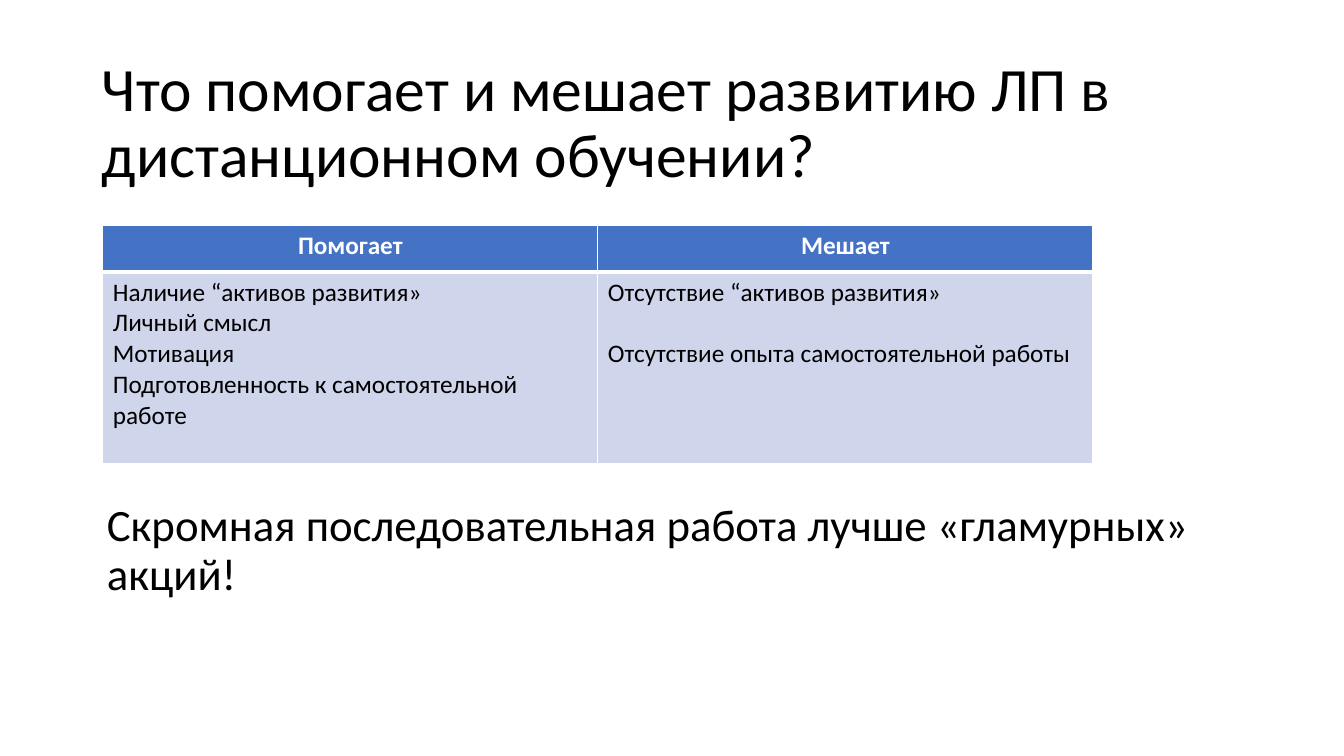
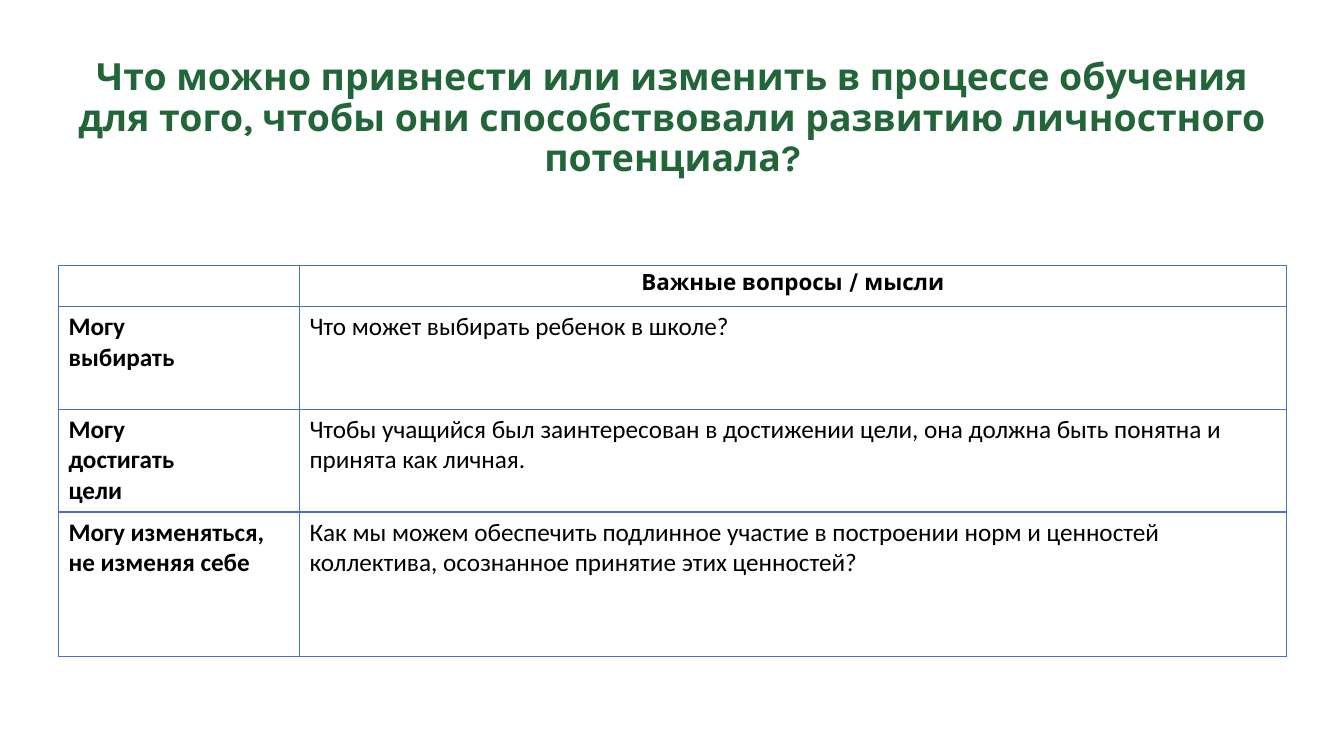
from dataclasses import dataclass
from typing import Optional

import pptx
import pptx.dml.color
import pptx.enum.text
import pptx.oxml
import pptx.oxml.ns
import pptx.util
from pptx.util import Inches

BLACK, WHITE = "000000", "FFFFFF"
BLUE, PALE_BLUE, GREEN = "4472C4", "CFD5EA", "216539"
TITLE_AND_BODY, TITLE_ONLY = 1, 5
ALIGN = pptx.enum.text.PP_ALIGN
ANCHOR = pptx.enum.text.MSO_ANCHOR
AUTO_SIZE = pptx.enum.text.MSO_AUTO_SIZE


@dataclass(frozen=True)
class TextStyle:
    size: float
    color: str = BLACK
    font: str = "Calibri"
    bold: bool = False
    align: ALIGN = ALIGN.LEFT


@dataclass(frozen=True)
class Box:
    left: float
    top: float
    width: float
    height: float


@dataclass(frozen=True)
class Borders:
    """Line colour and the widths in points of the four sides of a cell."""
    color: str
    left: float = 1
    right: float = 1
    top: float = 1
    bottom: float = 1


@dataclass(frozen=True)
class Cell:
    text: str
    style: TextStyle
    borders: Borders
    fill: Optional[str] = None


CELL_TEXT = TextStyle(18)
CELL_BOLD = TextStyle(18, bold=True)


def rgb(color: str) -> pptx.dml.color.RGBColor:
    return pptx.dml.color.RGBColor.from_string(color)


def write(tf, text: str, style: TextStyle) -> None:
    tf.text = text
    for p in tf.paragraphs:
        p.alignment = style.align
        for r in p.runs:
            r.font.name = style.font
            r.font.size = pptx.util.Pt(style.size)
            r.font.bold = style.bold
            r.font.color.rgb = rgb(style.color)


def fill_placeholder(sp, box: Box, text: str, style: TextStyle,
                     anchor: ANCHOR = ANCHOR.TOP, fitted: bool = False) -> None:
    """Move and format a placeholder; a fitted one has no insets and grows."""
    sp.left, sp.top = Inches(box.left), Inches(box.top)
    sp.width, sp.height = Inches(box.width), Inches(box.height)
    tf = sp.text_frame
    tf.word_wrap = True
    tf.vertical_anchor = anchor
    tf.auto_size = AUTO_SIZE.SHAPE_TO_FIT_TEXT if fitted else AUTO_SIZE.NONE
    tf.margin_left = tf.margin_right = Inches(0 if fitted else 0.1)
    tf.margin_top = tf.margin_bottom = Inches(0 if fitted else 0.05)
    write(tf, text, style)
    for p in tf.paragraphs:
        p.line_spacing = 0.9
        p.space_before = pptx.util.Pt(0)


def remove_bullets(tf) -> None:
    for p in tf.paragraphs:
        pPr = p._p.get_or_add_pPr()
        pPr.set("marL", "0")
        pPr.set("indent", "0")
        pptx.oxml.ns.qn("a:buNone")
        pPr.append(pptx.oxml.parse_xml(
            f'<a:buNone {pptx.oxml.ns.nsdecls("a")}/>'))


def draw_borders(cell, borders: Borders) -> None:
    tcPr = cell._tc.get_or_add_tcPr()
    sides = (("lnL", borders.left), ("lnR", borders.right),
             ("lnT", borders.top), ("lnB", borders.bottom))
    for i, (tag, width) in enumerate(sides):
        tcPr.insert(i, pptx.oxml.parse_xml(
            f'<a:{tag} {pptx.oxml.ns.nsdecls("a")} w="{pptx.util.Pt(width)}">'
            f'<a:solidFill><a:srgbClr val="{borders.color}"/></a:solidFill>'
            f'</a:{tag}>'))


def add_table(slide, left: float, top: float, widths: list[float],
              heights: list[float], rows: list[list[Cell]]):
    table = slide.shapes.add_table(
        len(heights), len(widths), Inches(left), Inches(top),
        Inches(sum(widths)), Inches(sum(heights))).table
    table.first_row = table.horz_banding = False
    for column, width in zip(table.columns, widths):
        column.width = Inches(width)
    for row, height, items in zip(table.rows, heights, rows):
        row.height = Inches(height)
        for cell, item in zip(row.cells, items):
            write(cell.text_frame, item.text, item.style)
            if item.fill:
                cell.fill.solid()
                cell.fill.fore_color.rgb = rgb(item.fill)
            else:
                cell.fill.background()
            draw_borders(cell, item.borders)
    return table


def add_help_slide(prs) -> None:
    slide = prs.slides.add_slide(prs.slide_layouts[TITLE_AND_BODY])
    fill_placeholder(
        slide.shapes.title, Box(0.91, 0.51, 11.5, 1.45),
        "Что помогает и мешает развитию ЛП в дистанционном обучении?",
        TextStyle(44), ANCHOR.MIDDLE)

    header = TextStyle(18, WHITE, bold=True, align=ALIGN.CENTER)
    headings = ["Помогает", "Мешает"]
    lists = [
        "Наличие “активов развития»\nЛичный смысл\nМотивация\n"
        "Подготовленность к самостоятельной работе",
        "Отсутствие “активов развития»\n"
        "Отсутствие опыта самостоятельной работы",
    ]
    table = add_table(slide, 1.02, 2.24, [4.91, 4.91], [0.46, 1.9], [
        [Cell(t, header, Borders(WHITE, bottom=3), BLUE) for t in headings],
        [Cell(t, CELL_TEXT, Borders(WHITE, top=3), PALE_BLUE) for t in lists],
    ])
    hindrances = table.cell(1, 1).text_frame
    hindrances.paragraphs[1].space_before = pptx.util.Pt(22)

    body = slide.placeholders[1]
    fill_placeholder(
        body, Box(0.96, 4.94, 11.5, 1.45),
        "Скромная последовательная работа лучше «гламурных» акций!",
        TextStyle(32))
    remove_bullets(body.text_frame)


def add_questions_slide(prs) -> None:
    slide = prs.slides.add_slide(prs.slide_layouts[TITLE_ONLY])
    fill_placeholder(
        slide.shapes.title, Box(0.58, 0.58, 12.18, 0.9),
        "Что можно привнести или изменить в процессе обучения для того, "
        "чтобы они способствовали развитию личностного потенциала?",
        TextStyle(26.7, GREEN, "Karla", True, ALIGN.CENTER), fitted=True)

    grid = Borders(BLUE)
    header = TextStyle(16, font="Karla", bold=True, align=ALIGN.CENTER)
    questions = [
        ("Могу\vвыбирать", "Что может выбирать ребенок в школе?"),
        ("Могу\nдостигать\vцели",
         "Чтобы учащийся был заинтересован в достижении цели, "
         "она должна быть понятна и принята как личная."),
        ("Могу изменяться,\vне изменяя себе",
         "Как мы можем обеспечить подлинное участие в построении норм и "
         "ценностей коллектива, осознанное принятие этих ценностей?"),
    ]
    rows = [[Cell("", header, grid),
             Cell("Важные вопросы / мысли", header, grid)]]
    rows += [[Cell(skill, CELL_BOLD, grid), Cell(question, CELL_TEXT, grid)]
             for skill, question in questions]
    add_table(slide, 0.58, 2.63, [2.39, 9.79], [0.41, 1.02, 1.02, 1.43], rows)


def main() -> None:
    prs = pptx.Presentation()
    prs.slide_width, prs.slide_height = Inches(13.33), Inches(7.5)
    add_help_slide(prs)
    add_questions_slide(prs)
    prs.save("out.pptx")


if __name__ == "__main__":
    main()
